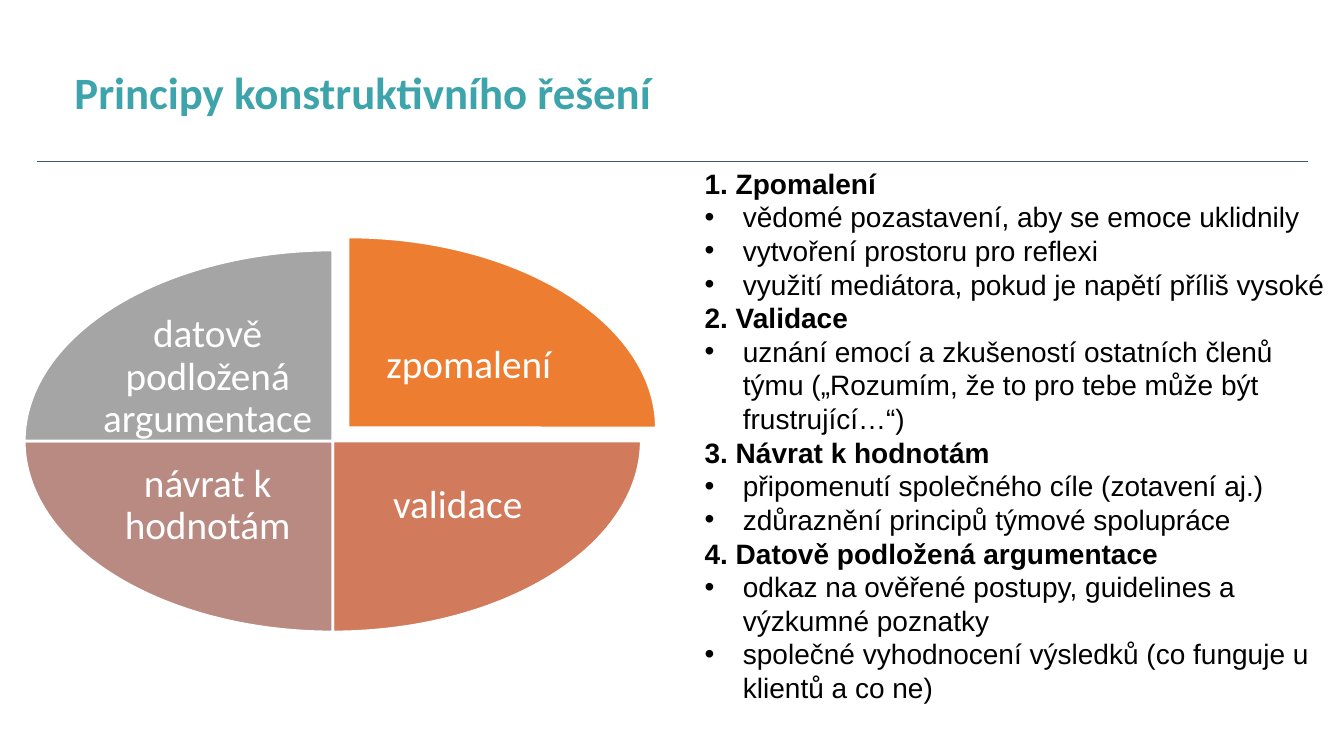
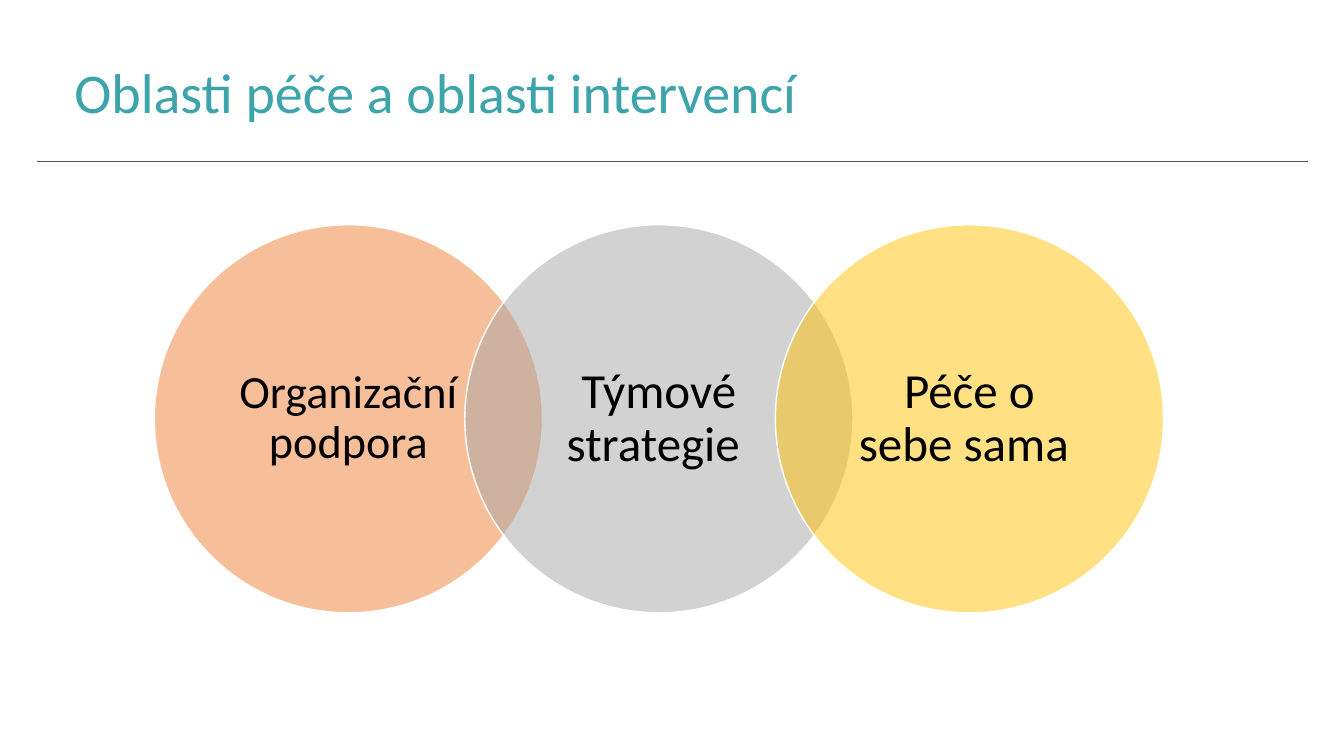
from lxml.etree import SubElement
from pptx import Presentation
from pptx.dml.color import RGBColor
from pptx.enum.shapes import MSO_CONNECTOR as CONNECTOR, MSO_SHAPE as SHAPE
from pptx.enum.text import MSO_ANCHOR as ANCHOR, PP_ALIGN as ALIGN
from pptx.oxml.ns import qn
from pptx.util import Inches, Pt

COLORS = {
    "title": "3CA4AA",
    "rule": "44546A",
    "text": "000000",
    "white": "FFFFFF",
    "orange": "ED7D31",
    "terracotta": "D17B5C",
    "rose": "B98A82",
    "grey": "A5A5A5",
    "yellow": "FFC000",
}
TITLE_BOX = (0.64, 0.42, 10.17, 1.05)
DEFAULT_INSETS = (0.1, 0.05)
CENTERED = {"alignment": ALIGN.CENTER, "line_spacing": 0.9}
BULLET_INDENT = 0.38

# Label, colour, start angle, slice offset and label offset within the wheel
SLICES = [
    ("zpomalení", "orange", 270, (0.15, -0.13), (3.28, 0.58)),
    ("validace", "terracotta", 0, (0, 0), (3.17, 1.97)),
    ("návrat k hodnotám", "rose", 90, (0, 0), (0.69, 1.97)),
    ("datově podložená argumentace", "grey", 180, (0, 0), (0.69, 0.7)),
]
PRINCIPLES = [
    ("1. Zpomalení", [
        "vědomé pozastavení, aby se emoce uklidnily",
        "vytvoření prostoru pro reflexi",
        "využití mediátora, pokud je napětí příliš vysoké",
    ]),
    ("2. Validace", [
        "uznání emocí a zkušeností ostatních členů týmu "
        "(„Rozumím, že to pro tebe může být frustrující…“)",
    ]),
    ("3. Návrat k hodnotám", [
        "připomenutí společného cíle (zotavení aj.)",
        "zdůraznění principů týmové spolupráce",
    ]),
    ("4. Datově podložená argumentace", [
        "odkaz na ověřené postupy, guidelines a výzkumné poznatky",
        "společné vyhodnocení výsledků (co funguje u klientů a co ne)",
    ]),
]
CARE_AREAS = [
    ("Organizační podpora", "orange", 33),
    ("Týmové strategie ", "grey", 35),
    ("Péče o sebe sama ", "yellow", 35),
]


def rgb(color):
    return RGBColor.from_string(COLORS[color])


def apply_format(target, values):
    for name, value in values.items():
        setattr(target, name, value)


def set_frame(frame, anchor, insets):
    horizontal, vertical = map(Inches, insets)
    apply_format(frame, {
        "word_wrap": True, "vertical_anchor": anchor,
        "margin_left": horizontal, "margin_right": horizontal,
        "margin_top": vertical, "margin_bottom": vertical,
    })


def write(paragraph, text, size, color, font="Calibri", bold=False, layout=None):
    apply_format(paragraph, layout or {})
    run = paragraph.add_run()
    run.text = text
    apply_format(run.font, {"name": font, "size": Pt(size), "bold": bold})
    run.font.color.rgb = rgb(color)


def add_text_frame(slide, box, anchor=ANCHOR.MIDDLE, insets=DEFAULT_INSETS):
    frame = slide.shapes.add_textbox(*map(Inches, box)).text_frame
    set_frame(frame, anchor, insets)
    return frame


def add_outlined_shape(slide, kind, box, color, line_width):
    shape = slide.shapes.add_shape(kind, *map(Inches, box))
    shape.shadow.inherit = False
    shape.fill.solid()
    shape.fill.fore_color.rgb = rgb(color)
    shape.line.color.rgb = rgb("white")
    shape.line.width = Pt(line_width)
    return shape


def add_bullet(paragraph):
    properties = paragraph._p.get_or_add_pPr()
    properties.set("marL", str(Inches(BULLET_INDENT)))
    properties.set("indent", str(-Inches(BULLET_INDENT)))
    SubElement(properties, qn("a:buFont"), typeface="Arial")
    SubElement(properties, qn("a:buChar"), char="•")


def add_titled_slide(deck, title, size, bold=False):
    slide = deck.slides.add_slide(deck.slide_layouts[6])
    rule = slide.shapes.add_connector(
        CONNECTOR.STRAIGHT, *map(Inches, (0.37, 1.6, 12.97, 1.6)))
    rule.line.color.rgb = rgb("rule")
    rule.line.width = Pt(0.75)
    SubElement(rule._element.spPr, qn("a:effectLst"))
    frame = add_text_frame(slide, TITLE_BOX)
    write(frame.paragraphs[0], title, size, "title", bold=bold,
          layout={"line_spacing": 0.9})
    return slide


def add_wheel(slide, box):
    """Draw the four quarter slices, the first one pulled out."""
    left, top, width, height = box
    for label, color, start, (shift_x, shift_y), (label_x, label_y) in SLICES:
        quarter = add_outlined_shape(
            slide, SHAPE.PIE, (left + shift_x, top + shift_y, width, height),
            color, 2)
        # One degree is 60000 angle units, and adjustments count in 100000
        quarter.adjustments[0] = start * 0.6
        quarter.adjustments[1] = (start + 90) % 360 * 0.6
        frame = add_text_frame(
            slide, (left + label_x, top + label_y, 2.26, 1.13),
            insets=(0.04, 0.04))
        write(frame.paragraphs[0], label, 28, "white", layout=CENTERED)


def add_principles(slide, box):
    frame = add_text_frame(slide, box, ANCHOR.TOP)
    paragraph = frame.paragraphs[0]
    for heading, points in PRINCIPLES:
        if paragraph.runs:
            paragraph = frame.add_paragraph()
        write(paragraph, heading, 20, "text", "Arial", bold=True)
        for point in points:
            paragraph = frame.add_paragraph()
            add_bullet(paragraph)
            write(paragraph, point, 20, "text", "Arial")


def add_care_circles(slide, box):
    """Draw a row of translucent circles, each overlapping the next by a fifth."""
    left, top, _, diameter = box
    for index, (label, color, size) in enumerate(CARE_AREAS):
        circle = add_outlined_shape(
            slide, SHAPE.OVAL,
            (left + index * 0.8 * diameter, top, diameter, diameter), color, 1)
        fill_color = circle._element.spPr.find(qn("a:solidFill"))[0]
        SubElement(fill_color, qn("a:alpha"), val="49000")
        set_frame(circle.text_frame, ANCHOR.MIDDLE, (0.21, 0.05))
        write(circle.text_frame.paragraphs[0], label, size, "text",
              layout=CENTERED)


def main():
    deck = Presentation()
    deck.slide_width, deck.slide_height = Inches(13.33), Inches(7.5)

    principles = add_titled_slide(
        deck, "Principy konstruktivního řešení", 32, bold=True)
    add_wheel(principles, (0.24, 2.48, 6.12, 3.79))
    add_principles(principles, (6.89, 1.6, 6.44, 5.82))

    care = add_titled_slide(deck, "Oblasti péče a oblasti intervencí", 40)
    add_care_circles(care, (1.53, 2.23, 10.01, 3.85))

    deck.save("out.pptx")


if __name__ == "__main__":
    main()
